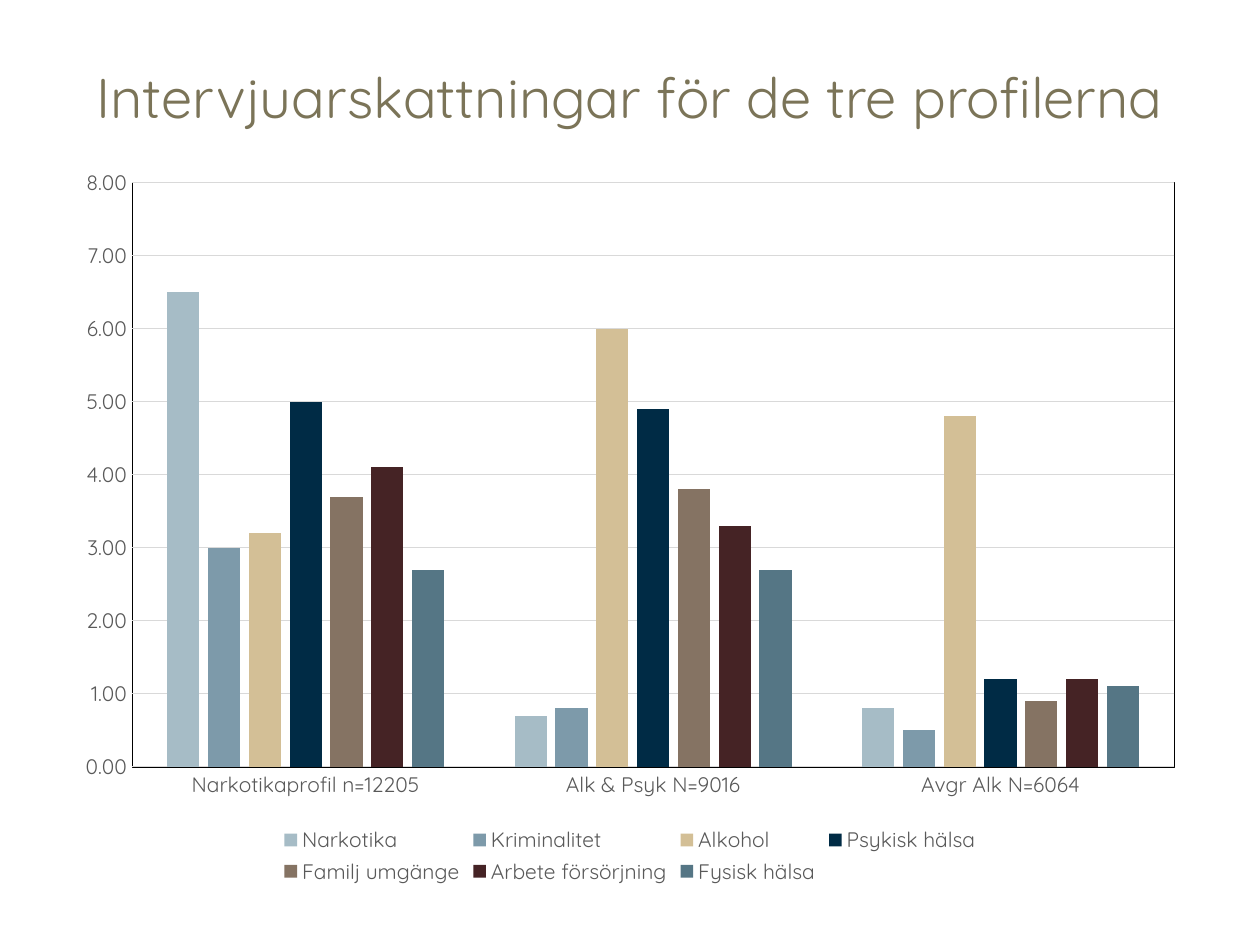
"""Build a slide with a column chart of interviewer ratings for three profiles."""
from dataclasses import dataclass

from lxml.etree import SubElement
from pptx import Presentation
from pptx.chart.data import CategoryChartData as Data
from pptx.dml.color import RGBColor
from pptx.enum.chart import XL_CHART_TYPE as Kind, XL_LEGEND_POSITION as Spot
from pptx.enum.chart import XL_TICK_MARK as Tick
from pptx.enum.text import MSO_ANCHOR as Anchor, PP_ALIGN as Align
from pptx.oxml.ns import qn
from pptx.util import Cm, Pt

FACE = "Quicksand"
GREY, PALE = "595959", "D9D9D9"
LEFT, WIDTH = Cm(1.27), Cm(22.86)


@dataclass
class Series:
    name: str
    vals: tuple[float, ...]
    color: str


GROUPS = ("Narkotikaprofil n=12205", "Alk & Psyk N=9016", "Avgr Alk N=6064")
ITEMS = (
    Series("Narkotika", (6.5, 0.7, 0.8), "A6BCC6"),
    Series("Kriminalitet", (3, 0.8, 0.5), "7D9AAA"),
    Series("Alkohol", (3.2, 6, 4.8), "D3BF96"),
    Series("Psykisk hälsa", (5, 4.9, 1.2), "002B45"),
    Series("Familj umgänge", (3.7, 3.8, 0.9), "857363"),
    Series("Arbete försörjning", (4.1, 3.3, 1.2), "452325"),
    Series("Fysisk hälsa", (2.7, 2.7, 1.1), "557685"),
)


def tint(target, code: str) -> None:
    target.rgb = RGBColor.from_string(code)


def style(font, size: float, code: str) -> None:
    font.name, font.size = FACE, Pt(size)
    tint(font.color, code)


def rule(line) -> None:
    line.width = Pt(0.75)
    tint(line.color, PALE)


def add_title(slide, text: str) -> None:
    title = slide.shapes.title
    title.left, title.top, title.width, title.height = LEFT, Cm(0.76), WIDTH, Cm(2.36)
    frame = title.text_frame
    frame.word_wrap = True
    frame.vertical_anchor = Anchor.MIDDLE
    para = frame.paragraphs[0]
    para.alignment = Align.CENTER
    run = para.add_run()
    run.text = text
    style(run.font, 32, "7B7458")


def style_axes(chart) -> None:
    base, scale = chart.category_axis, chart.value_axis
    for axis in (base, scale):
        axis.major_tick_mark = axis.minor_tick_mark = Tick.NONE
        style(axis.tick_labels.font, 12, GREY)
    rule(base.format.line)
    scale.format.line.fill.background()
    scale.minimum_scale, scale.maximum_scale, scale.major_unit = 0, 8, 1
    scale.tick_labels.number_format = "0.00"
    scale.tick_labels.number_format_is_linked = False
    rule(scale.major_gridlines.format.line)


def frame_plot(chart) -> None:
    area = chart.element.find(".//" + qn("c:plotArea"))
    props = SubElement(area, qn("c:spPr"))
    SubElement(props, qn("a:noFill"))
    line = SubElement(props, qn("a:ln"), w="3175")
    fill = SubElement(line, qn("a:solidFill"))
    SubElement(fill, qn("a:srgbClr"), val="000000")


def add_bars(slide) -> None:
    data = Data(number_format="0.00")
    data.categories = GROUPS
    for item in ITEMS:
        data.add_series(item.name, item.vals)
    chart = slide.shapes.add_chart(
        Kind.COLUMN_CLUSTERED, LEFT, Cm(3.12), WIDTH, Cm(14.81), data
    ).chart
    style(chart.font, 10, "000000")
    chart.has_title = False
    chart.has_legend = True
    chart.legend.position = Spot.BOTTOM
    chart.legend.include_in_layout = False
    style(chart.legend.font, 12, GREY)
    plot = chart.plots[0]
    plot.gap_width, plot.overlap, plot.vary_by_categories = 219, -27, False
    for bar, item in zip(plot.series, ITEMS):
        bar.format.fill.solid()
        tint(bar.format.fill.fore_color, item.color)
    style_axes(chart)
    frame_plot(chart)


def main() -> None:
    deck = Presentation()
    deck.slide_width, deck.slide_height = Cm(25.4), Cm(19.05)
    slide = deck.slides.add_slide(deck.slide_layouts[5])
    add_title(slide, "Intervjuarskattningar för de tre profilerna")
    add_bars(slide)
    deck.save("out.pptx")


if __name__ == "__main__":
    main()
